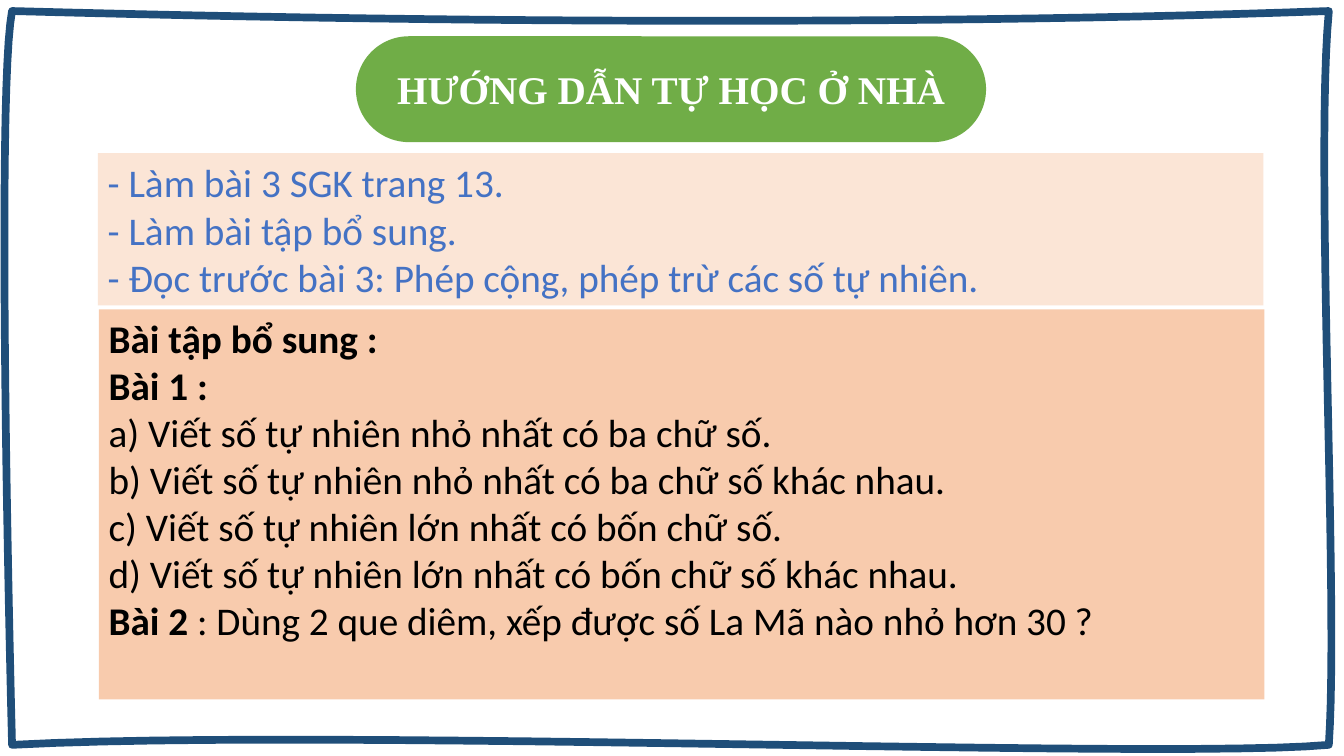
from pptx import Presentation
from pptx import util as u
from pptx.dml.color import RGBColor
from pptx.enum import shapes, text

NAVY = RGBColor(0x1F, 0x4E, 0x79)
GREEN = RGBColor(0x70, 0xAD, 0x47)
CREAM = RGBColor(0xFB, 0xE5, 0xD6)
PEACH = RGBColor(0xF8, 0xCB, 0xAD)
BLUE = RGBColor(0x44, 0x72, 0xC4)
WHITE = RGBColor(0xFF, 0xFF, 0xFF)
BLACK = RGBColor(0x00, 0x00, 0x00)

COLS, ROWS = 133.3, 75  # grid cells across and down the slide
CURVE_STEPS = 24


def bezier(p0, p1, p2, p3):
    """Points along a cubic curve, without its start."""
    for i in range(1, CURVE_STEPS + 1):
        t = i / CURVE_STEPS
        s = 1 - t
        yield tuple(s**3 * a + 3 * s * s * t * b + 3 * s * t * t * c + t**3 * d
                    for a, b, c, d in zip(p0, p1, p2, p3))


class Deck:
    def __init__(self):
        self.prs = Presentation()
        self.prs.slide_width, self.prs.slide_height = u.Inches(13.33), u.Inches(7.5)
        self.slide = self.prs.slides.add_slide(self.prs.slide_layouts[6])
        self.font = {"name": "Calibri", "size": u.Pt(28), "bold": False}

    def x(self, cols):
        return round(self.prs.slide_width * cols / COLS)

    def y(self, rows):
        return round(self.prs.slide_height * rows / ROWS)

    def frame(self, start, curves, color, width):
        """Closed outline through cubic curves given as grid points."""
        points, here = [], start
        for curve in curves:
            points += bezier(here, *curve)
            here = curve[-1]
        fb = self.slide.shapes.build_freeform(self.x(start[0]), self.y(start[1]))
        fb.add_line_segments([(self.x(a), self.y(b)) for a, b in points], close=True)
        sp = fb.convert_to_shape()
        sp.shadow.inherit = False
        sp.fill.background()
        sp.line.color.rgb = color
        sp.line.width = u.Pt(width)

    def panel(self, kind, box, fill, color, lines, align="LEFT", anchor="MIDDLE", **font):
        """Filled shape; each line is a list of (text, bold) runs."""
        left, top, width, height = box
        sp = self.slide.shapes.add_shape(
            kind, self.x(left), self.y(top), self.x(width), self.y(height))
        sp.shadow.inherit = False
        sp.fill.solid()
        sp.fill.fore_color.rgb = fill
        sp.line.fill.background()
        tf = sp.text_frame
        tf.word_wrap = True
        tf.vertical_anchor = text.MSO_ANCHOR[anchor]
        for i, runs in enumerate(lines):
            p = tf.add_paragraph() if i else tf.paragraphs[0]
            p.alignment = text.PP_ALIGN[align]
            for words, bold in runs:
                r = p.add_run()
                r.text = words
                for key, value in {**self.font, "bold": bold, **font}.items():
                    setattr(r.font, key, value)
                r.font.color.rgb = color
        return sp


def main():
    deck = Deck()
    rect = shapes.MSO_SHAPE.RECTANGLE

    # Hand-drawn border
    deck.frame((1.2, 1.1), [
        ((48.4, 2.4), (95.9, 2.4), (131.8, 1.1)),
        ((130.4, 16), (132.8, 59.2), (131.8, 73.9)),
        ((115.6, 75.4), (32.8, 72.2), (1.2, 73.9)),
        ((1, 66.1), (-0.4, 9.2), (1.2, 1.1)),
    ], NAVY, 5.5)

    # Title pill
    title = deck.panel(shapes.MSO_SHAPE.ROUNDED_RECTANGLE, (35.3, 3.6, 62.5, 10.5),
                       GREEN, WHITE, [[("HƯỚNG DẪN TỰ HỌC Ở NHÀ", True)]],
                       align="CENTER", name="Times New Roman")
    title.adjustments[0] = 0.5

    # Homework
    homework = ["- Làm bài 3 SGK trang 13.",
                "- Làm bài tập bổ sung.",
                "- Đọc trước bài 3: Phép cộng, phép trừ các số tự nhiên."]
    deck.panel(rect, (9.7, 15.2, 115.6, 15.1), CREAM, BLUE,
               [[(line, False)] for line in homework])

    # Extra exercises
    exercises = [
        [("Bài tập bổ sung :", True)],
        [("Bài 1 :", True)],
        [("a) Viết số tự nhiên nhỏ nhất có ba chữ số.", False)],
        [("b) Viết số tự nhiên nhỏ nhất có ba chữ số khác nhau.", False)],
        [("c) Viết số tự nhiên lớn nhất có bốn chữ số.", False)],
        [("d) Viết số tự nhiên lớn nhất có bốn chữ số khác nhau.", False)],
        [("Bài 2", True),
         (" : Dùng 2 que diêm, xếp được số La Mã nào nhỏ hơn 30 ?", False)],
    ]
    deck.panel(rect, (9.8, 30.7, 115.6, 38.7), PEACH, BLACK, exercises, anchor="TOP")

    deck.prs.save("out.pptx")


if __name__ == "__main__":
    main()
